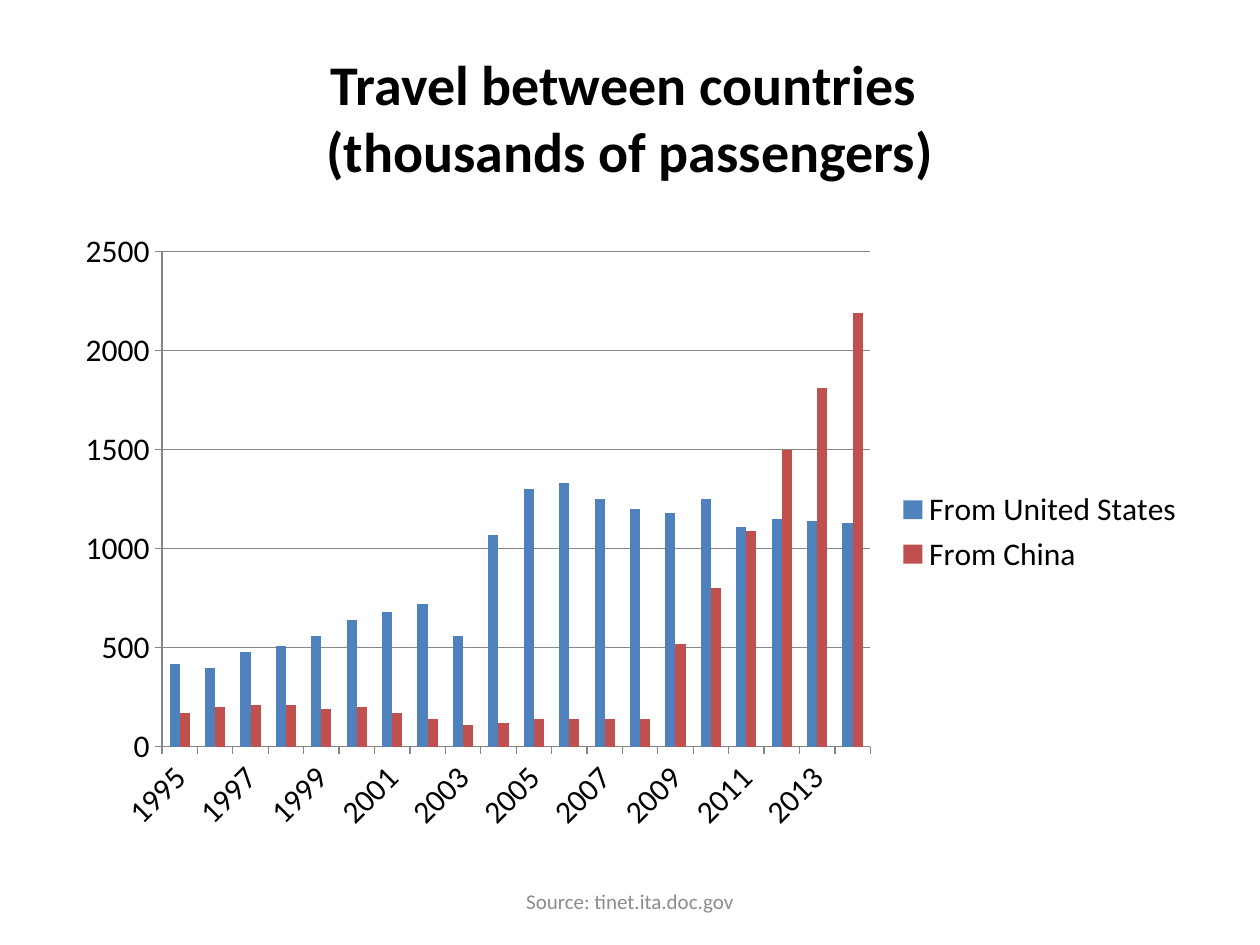
from dataclasses import dataclass

from pptx import Presentation
from pptx.chart.data import CategoryChartData as ChartData
from pptx.dml.color import RGBColor
from pptx.enum.chart import XL_CHART_TYPE as Kind
from pptx.enum.chart import XL_LEGEND_POSITION as Side
from pptx.enum.chart import XL_TICK_MARK as Tick
from pptx.enum.text import MSO_ANCHOR as Anchor
from pptx.enum.text import PP_ALIGN as Align
from pptx.util import Cm, Pt

FONT = "Calibri"
BLACK = RGBColor(0x00, 0x00, 0x00)
GRAY = RGBColor(0x8C, 0x8C, 0x8C)
AXIS = RGBColor(0x86, 0x86, 0x86)
BLUE = RGBColor(0x4F, 0x81, 0xBD)
RED = RGBColor(0xC0, 0x50, 0x4D)


@dataclass
class Box:
    left: float
    top: float
    width: float
    height: float

    def place(self) -> tuple:
        return Cm(self.left), Cm(self.top), Cm(self.width), Cm(self.height)


@dataclass
class Label:
    box: Box
    lines: list[str]
    size: int
    color: RGBColor
    bold: bool = False


@dataclass
class Series:
    name: str
    color: RGBColor
    values: list[int]


LABELS = [
    Label(Box(1.27, 0.76, 22.86, 3.18),
          ["Travel between countries ", "(thousands of passengers)"],
          32, BLACK, True),
    Label(Box(8.68, 17.65, 8.04, 1.02),
          ["Source: tinet.ita.doc.gov"], 12, GRAY),
]
YEARS = list(range(1995, 2015))
TRAVEL = [
    Series("From United States", BLUE,
           [420, 400, 480, 510, 560, 640, 680, 720, 560, 1070,
            1300, 1330, 1250, 1200, 1180, 1250, 1110, 1150, 1140, 1130]),
    Series("From China", RED,
           [170, 200, 210, 210, 190, 200, 170, 140, 110, 120,
            140, 140, 140, 140, 520, 800, 1090, 1500, 1810, 2190]),
]


def add_label(slide, label: Label) -> None:
    frame = slide.shapes.add_textbox(*label.box.place()).text_frame
    frame.word_wrap = True
    frame.vertical_anchor = Anchor.MIDDLE
    para = frame.paragraphs[0]
    para.alignment = Align.CENTER
    for i, line in enumerate(label.lines):
        if i:
            para.add_line_break()
        run = para.add_run()
        run.text = line
        font = run.font
        font.name, font.size, font.bold = FONT, Pt(label.size), label.bold
        font.color.rgb = label.color


def style_line(line) -> None:
    line.color.rgb = AXIS
    line.width = Pt(0.75)


def add_bars(slide, box: Box, years: list[int], rows: list[Series]) -> None:
    data = ChartData()
    data.categories = years
    for row in rows:
        data.add_series(row.name, row.values)
    chart = slide.shapes.add_chart(
        Kind.COLUMN_CLUSTERED, *box.place(), data).chart
    chart.has_title = False
    font = chart.font
    font.name, font.size = FONT, Pt(18)
    font.color.rgb = BLACK

    chart.has_legend = True
    chart.legend.position = Side.RIGHT
    chart.legend.include_in_layout = False

    plot = chart.plots[0]
    plot.gap_width = 150
    plot.vary_by_categories = False
    for bars, row in zip(plot.series, rows):
        bars.format.fill.solid()
        bars.format.fill.fore_color.rgb = row.color

    for axis in (chart.category_axis, chart.value_axis):
        axis.major_tick_mark = Tick.OUTSIDE
        axis.minor_tick_mark = Tick.NONE
        style_line(axis.format.line)
    scale = chart.value_axis
    scale.minimum_scale, scale.maximum_scale = 0, 2500
    scale.major_unit = 500
    scale.has_major_gridlines = True
    style_line(scale.major_gridlines.format.line)


def main() -> None:
    deck = Presentation()
    deck.slide_width, deck.slide_height = Cm(25.4), Cm(19.05)
    slide = deck.slides.add_slide(deck.slide_layouts[6])
    add_bars(slide, Box(1.27, 4.44, 22.86, 12.57), YEARS, TRAVEL)
    for label in LABELS:
        add_label(slide, label)
    deck.save("out.pptx")


if __name__ == "__main__":
    main()
